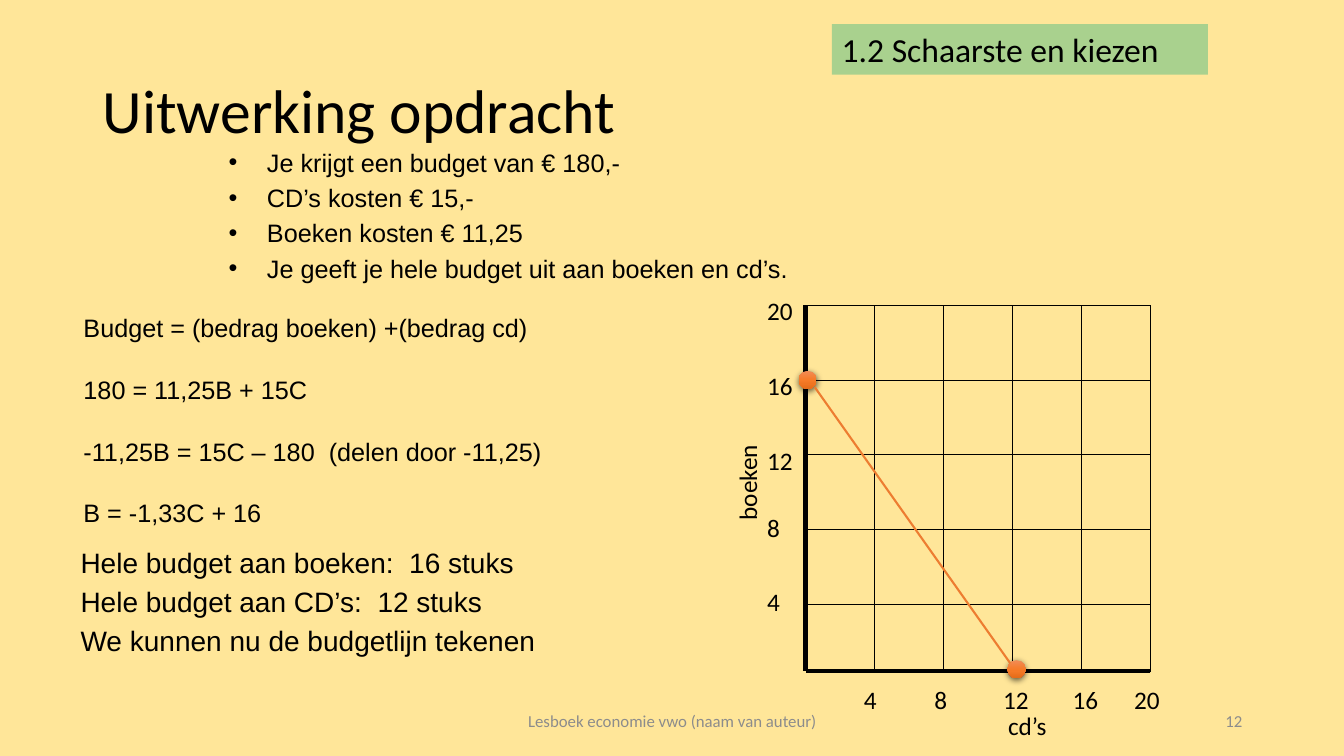
from lxml.etree import SubElement
from pptx import Presentation
from pptx.dml.color import RGBColor
from pptx.enum.dml import MSO_LINE
from pptx.enum.shapes import MSO_CONNECTOR, MSO_SHAPE
from pptx.enum.text import MSO_ANCHOR, PP_ALIGN
from pptx.oxml import parse_xml
from pptx.oxml.ns import qn
from pptx.util import Inches, Pt

SPACE = 'xmlns:a="http://schemas.openxmlformats.org/drawingml/2006/main"'
GRAD = f"""<a:gradFill {SPACE} rotWithShape="1"><a:gsLst>
<a:gs pos="0"><a:srgbClr val="F18C57"/></a:gs>
<a:gs pos="50000"><a:srgbClr val="F67B28"/></a:gs>
<a:gs pos="100000"><a:srgbClr val="E56C19"/></a:gs>
</a:gsLst><a:lin ang="5400000" scaled="0"/></a:gradFill>"""
SHADE = f"""<a:effectLst {SPACE}><a:outerShdw blurRad="57150" dist="19050"
dir="5400000" algn="ctr" rotWithShape="0"><a:srgbClr val="000000">
<a:alpha val="63000"/></a:srgbClr></a:outerShdw></a:effectLst>"""


def color(code):
    """Turn a hex string into a colour."""
    return RGBColor.from_string(code)


def style(frame, lines, size, font="Calibri", tint="000000", gap=0,
          align=PP_ALIGN.LEFT, anchor=MSO_ANCHOR.TOP, wrap=True):
    """Fill a text frame with equally formatted paragraphs."""
    frame.text = "\n".join(lines)
    frame.word_wrap = wrap
    frame.vertical_anchor = anchor
    for para in frame.paragraphs:
        para.alignment = align
        para.space_before = Pt(gap)
        for run in para.runs:
            run.font.size = Pt(size)
            run.font.name = font
            run.font.color.rgb = color(tint)


def write(slide, box, lines, size, **look):
    """Add a text box at the given place."""
    shape = slide.shapes.add_textbox(*map(Inches, box))
    style(shape.text_frame, lines, size, **look)
    return shape


def rule(slide, start, end, width, tint="000000", dash=None):
    """Draw a straight line between two points."""
    line = slide.shapes.add_connector(
        MSO_CONNECTOR.STRAIGHT, *map(Inches, (*start, *end)))
    line.line.color.rgb = color(tint)
    line.line.width = Pt(width)
    if dash:
        line.line.dash_style = dash
    SubElement(line._element.spPr, qn("a:effectLst"))


def dot(slide, x, y, size=0.18):
    """Place a shaded round marker centred on a point."""
    box = (x - size / 2, y - size / 2, size, size)
    mark = slide.shapes.add_shape(MSO_SHAPE.OVAL, *map(Inches, box))
    props = mark._element.spPr
    props.append(parse_xml(GRAD))
    mark.line.fill.background()
    props.append(parse_xml(SHADE))


def head(slide, x, y):
    """Place the section label and the title."""
    tag = slide.shapes.add_shape(
        MSO_SHAPE.RECTANGLE, *map(Inches, (x + 7.33, y - 0.16, 3.73, 0.5)))
    tag.shadow.inherit = False
    tag.fill.solid()
    tag.fill.fore_color.rgb = color("A9D18E")
    tag.line.fill.background()
    style(tag.text_frame, ["1.2 Schaarste en kiezen"], 24)
    title = write(slide, (x, y, 11.5, 1.45), ["Uitwerking opdracht"], 44,
                  anchor=MSO_ANCHOR.MIDDLE)
    title.text_frame.paragraphs[0].line_spacing = 0.9


def facts(slide, box):
    """Place the bulleted facts of the task."""
    shape = write(slide, box, [
        "Je krijgt een budget van € 180,-",
        "CD’s kosten € 15,-",
        "Boeken kosten € 11,25",
        "Je geeft je hele budget uit aan boeken en cd’s.",
    ], 18, font="Arial", gap=3.6)
    for para in shape.text_frame.paragraphs:
        props = para._p.get_or_add_pPr()
        props.set("marL", str(Inches(0.38)))
        props.set("indent", str(Inches(-0.38)))
        SubElement(props, qn("a:buFont"), typeface="Arial")
        SubElement(props, qn("a:buChar"), char="•")


def solve(slide, x, y):
    """Place the equations and the conclusions below them."""
    sums = write(slide, (x + 0.03, y, 5.04, 2.22), [
        "Budget = (bedrag boeken) +(bedrag cd)",
        "180 = 11,25B + 15C",
        "-11,25B = 15C – 180  (delen door -11,25)",
        "B = -1,33C + 16",
    ], 18, font="Arial", gap=22.5)
    sums.text_frame.paragraphs[0].space_before = Pt(0)
    write(slide, (x, y + 2.31, 4.81, 1.48), [
        "Hele budget aan boeken:  16 stuks",
        "Hele budget aan CD’s:  12 stuks",
        "We kunnen nu de budgetlijn tekenen",
    ], 20, font="Arial", gap=4)


def graph(slide, x, y, wide, high):
    """Draw the budget line on its grid with axes and labels."""
    right, base = x + wide, y + high
    col, row = wide / 5, 0.74
    rule(slide, (x, y), (x, base), 3)
    rule(slide, (right, base), (x, base), 3)
    for i in range(5):
        level, post = y + i * row, x + (i + 1) * col
        rule(slide, (x, level), (right, level), 0.25, dash=MSO_LINE.ROUND_DOT)
        rule(slide, (post, y), (post, base), 0.25, dash=MSO_LINE.ROUND_DOT)

    ticks = ["4", "8", "12", "16", "20"]
    lefts = [0.48, 1.18, 1.86, 2.55, 3.16]
    tops = [2.74, 2, 1.34, 0.59, -0.15]
    for tick, left, top in zip(ticks, lefts, tops):
        size = 0.2 + 0.13 * len(tick)
        write(slide, (x - 0.48, y + top, size, 0.4), [tick], 18, wrap=False)
        write(slide, (x + left, base + 0.08, size, 0.4), [tick], 18,
              wrap=False)
    write(slide, (x + 1.91, base + 0.34, 0.59, 0.4), ["cd’s"], 18, wrap=False)
    name = write(slide, (x - 1.06, y + 1.55, 0.96, 0.4), ["boeken"], 18,
                 wrap=False)
    name.rotation = 270

    dot(slide, x + 0.02, y + row)
    dot(slide, x + 3 * col + 0.04, base - 0.02)
    rule(slide, (x + 0.09, y + row + 0.07), (x + 2.03, base - 0.08), 1.5,
         "ED7D31")


def foot(slide, y):
    """Place the footer text and the page number."""
    look = {"tint": "8C8C8C", "anchor": MSO_ANCHOR.MIDDLE}
    write(slide, (4.42, y, 4.5, 0.4),
          ["Lesboek economie vwo (naam van auteur)"], 12,
          align=PP_ALIGN.CENTER, **look)
    write(slide, (9.42, y, 3, 0.4), ["12"], 12, align=PP_ALIGN.RIGHT, **look)


def main():
    """Build and save the slide."""
    deck = Presentation()
    deck.slide_width, deck.slide_height = Inches(13.33), Inches(7.5)
    slide = deck.slides.add_slide(deck.slide_layouts[6])
    slide.background.fill.solid()
    slide.background.fill.fore_color.rgb = color("FFE699")
    head(slide, 0.92, 0.4)
    facts(slide, (2.17, 1.41, 9, 1.56))
    solve(slide, 0.7, 3.05)
    graph(slide, 7.99, 3.03, 3.42, 3.63)
    foot(slide, 6.95)
    deck.save("out.pptx")


if __name__ == "__main__":
    main()
